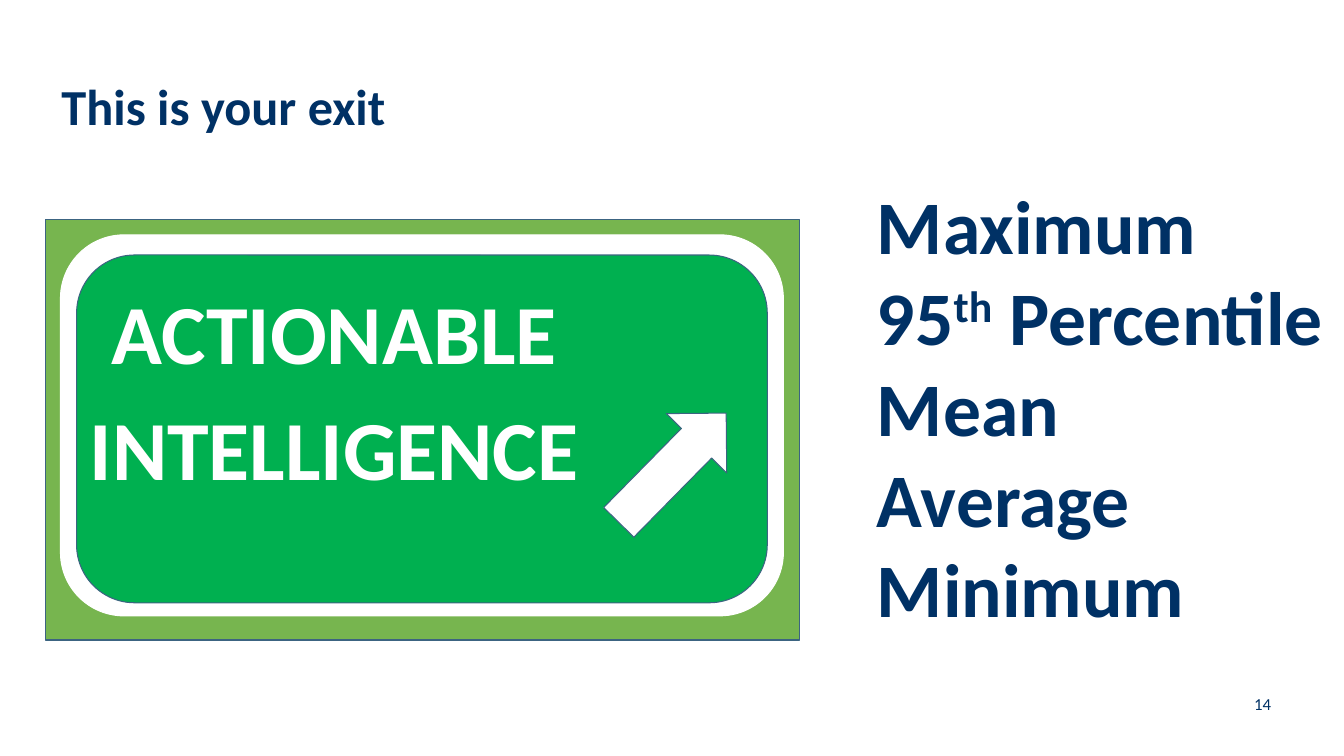
from dataclasses import dataclass

from lxml import etree
from pptx import Presentation
from pptx.dml.color import RGBColor
from pptx.enum.shapes import MSO_SHAPE
from pptx.enum.text import MSO_ANCHOR, MSO_AUTO_SIZE, PP_ALIGN
from pptx.oxml.ns import qn
from pptx.slide import Slide
from pptx.text.text import TextFrame
from pptx.util import Inches, Pt

RECT, ROUNDED, ARROW = MSO_SHAPE.RECTANGLE, MSO_SHAPE.ROUNDED_RECTANGLE, MSO_SHAPE.RIGHT_ARROW
TOP, MIDDLE, BOTTOM = MSO_ANCHOR.TOP, MSO_ANCHOR.MIDDLE, MSO_ANCHOR.BOTTOM
LEFT, CENTER = PP_ALIGN.LEFT, PP_ALIGN.CENTER
FIXED, GROW = MSO_AUTO_SIZE.NONE, MSO_AUTO_SIZE.SHAPE_TO_FIT_TEXT

NAVY, WHITE, EDGE = "003165", "FFFFFF", "3C6481"
LIME, GREEN = "77B54F", "00B050"
TITLE_AND_CONTENT = 1


@dataclass(frozen=True)
class Box:
    left: float
    top: float
    width: float
    height: float

    def lengths(self) -> list[int]:
        return [Inches(v) for v in (self.left, self.top, self.width, self.height)]


@dataclass(frozen=True)
class SignPart:
    kind: MSO_SHAPE
    box: Box
    fill: str
    line: str = EDGE
    rotation: float = 0


@dataclass(frozen=True)
class TextStyle:
    size: float
    color: str = NAVY
    bold: bool = True
    align: PP_ALIGN = LEFT
    anchor: MSO_ANCHOR = TOP
    gap: float = 0
    wrap: bool = True
    fit: MSO_AUTO_SIZE = FIXED


SIGN = [
    SignPart(RECT, Box(0.45, 2.18, 7.48, 4.17), LIME),
    SignPart(ROUNDED, Box(0.6, 2.33, 7.17, 3.78), WHITE, WHITE),
    SignPart(ROUNDED, Box(0.76, 2.53, 6.85, 3.45), GREEN),
    SignPart(ARROW, Box(5.91, 4.22, 1.52, 0.84), WHITE, rotation=314.5),
]
# Each line is a list of runs; "^" marks a superscript run.
STATISTICS = [["Maximum"], ["95", "^th", " Percentile"], ["Mean"], ["Average"], ["Minimum"]]


def rgb(color: str) -> RGBColor:
    return RGBColor.from_string(color)


def write(frame: TextFrame, lines: list[list[str]], style: TextStyle) -> None:
    layout = {"word_wrap": style.wrap, "auto_size": style.fit, "vertical_anchor": style.anchor}
    for name, value in layout.items():
        setattr(frame, name, value)
    font_format = {"name": "Calibri", "size": Pt(style.size), "bold": style.bold}
    for index, runs in enumerate(lines):
        paragraph = frame.add_paragraph() if index else frame.paragraphs[0]
        paragraph.alignment = style.align
        paragraph.space_before = Pt(style.gap if index else 0)
        for text in runs:
            run = paragraph.add_run()
            run.text = text.removeprefix("^")
            for name, value in font_format.items():
                setattr(run.font, name, value)
            run.font.color.rgb = rgb(style.color)
            if text.startswith("^"):
                run._r.get_or_add_rPr().set("baseline", "30000")


def place(shape, box: Box) -> None:
    shape.left, shape.top, shape.width, shape.height = box.lengths()


def remove_bullets(frame: TextFrame) -> None:
    for paragraph in frame.paragraphs:
        properties = paragraph._p.get_or_add_pPr()
        properties.set("marL", "0")
        properties.set("indent", "0")
        etree.SubElement(properties, qn("a:buNone"))


def draw_part(slide: Slide, part: SignPart) -> None:
    shape = slide.shapes.add_shape(part.kind, *part.box.lengths())
    shape.shadow.inherit = False
    shape.rotation = part.rotation
    shape.fill.solid()
    shape.fill.fore_color.rgb = rgb(part.fill)
    shape.line.color.rgb = rgb(part.line)
    shape.line.width = Pt(0.75)


def add_text(slide: Slide, box: Box, lines: list[list[str]], style: TextStyle) -> None:
    write(slide.shapes.add_textbox(*box.lengths()).text_frame, lines, style)


def main() -> None:
    deck = Presentation()
    deck.slide_width, deck.slide_height = Inches(13.33), Inches(7.5)
    slide = deck.slides.add_slide(deck.slide_layouts[TITLE_AND_CONTENT])

    title = slide.shapes.title
    place(title, Box(0.51, 0.14, 12.14, 1.26))
    write(title.text_frame, [["This is your exit"]], TextStyle(36, anchor=BOTTOM))

    for part in SIGN:
        draw_part(slide, part)

    sign_words = slide.placeholders[1]
    place(sign_words, Box(-0.03, 2.73, 6.69, 3.39))
    write(sign_words.text_frame, [["ACTIONABLE"], ["INTELLIGENCE"]],
          TextStyle(60, WHITE, align=CENTER, gap=11))
    remove_bullets(sign_words.text_frame)
    # The words stand in front of the sign.
    sign_words.element.getparent().append(sign_words.element)

    add_text(slide, Box(8.6, 1.73, 4.73, 4.64), STATISTICS, TextStyle(54, wrap=False, fit=GROW))
    add_text(slide, Box(12.34, 6.86, 0.49, 0.25), [["14"]],
             TextStyle(12, bold=False, anchor=MIDDLE))
    deck.save("out.pptx")


if __name__ == "__main__":
    main()
